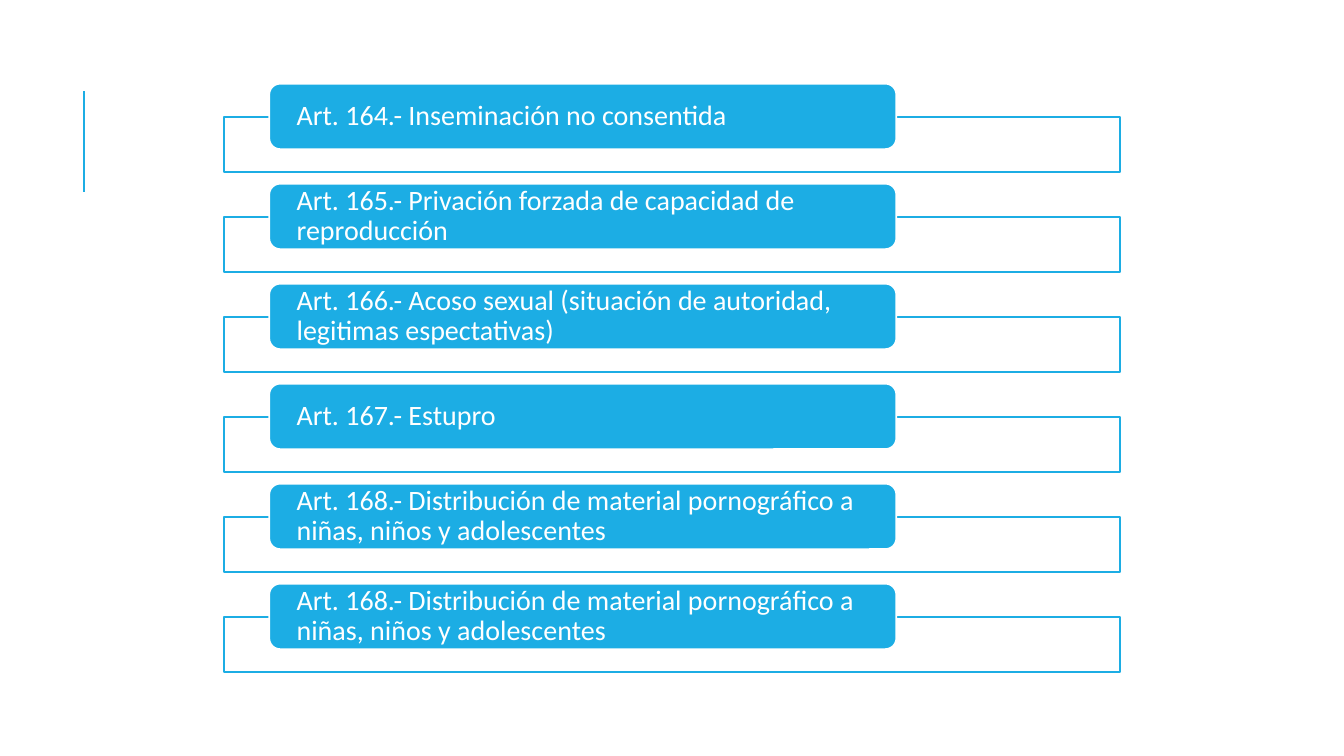
"""Build a slide listing articles 164 to 168 as labelled boxes."""
from dataclasses import dataclass

from lxml.etree import SubElement
from pptx import Presentation
from pptx.dml.color import RGBColor
from pptx.enum.shapes import MSO_CONNECTOR, MSO_SHAPE
from pptx.enum.text import MSO_ANCHOR, PP_ALIGN
from pptx.oxml.ns import qn
from pptx.shapes.autoshape import Shape
from pptx.slide import Slide
from pptx.util import Inches, Pt

COLORS = {"accent": "1CADE4", "white": "FFFFFF"}
FIRST_TOP, LAST_TOP = 0.83, 5.79
FRAME_DROP = 0.33


@dataclass(frozen=True)
class Article:
    number: int
    offence: str


ARTICLES = [
    Article(164, "Inseminación no consentida"),
    Article(165, "Privación forzada de capacidad de reproducción"),
    Article(166, "Acoso sexual (situación de autoridad, legitimas espectativas)"),
    Article(167, "Estupro"),
    Article(168, "Distribución de material pornográfico a niñas, niños y adolescentes"),
    Article(168, "Distribución de material pornográfico a niñas, niños y adolescentes"),
]


def color(name: str) -> RGBColor:
    return RGBColor.from_string(COLORS[name])


def add_box(slide: Slide, kind: MSO_SHAPE, left: float, top: float, width: float,
            height: float, fill: str, line: str) -> Shape:
    box = slide.shapes.add_shape(kind, Inches(left), Inches(top), Inches(width), Inches(height))
    box.shadow.inherit = False
    box.fill.solid()
    box.fill.fore_color.rgb = color(fill)
    box.line.color.rgb = color(line)
    box.line.width = Pt(1.25)
    return box


def add_article(slide: Slide, article: Article, top: float) -> None:
    frame = add_box(slide, MSO_SHAPE.RECTANGLE, 2.22, top + FRAME_DROP, 8.89, 0.55,
                    "white", "accent")
    frame_color = frame.fill._xPr.find(qn("a:solidFill"))[0]
    SubElement(frame_color, qn("a:alpha"), val="90000")

    label = add_box(slide, MSO_SHAPE.ROUNDED_RECTANGLE, 2.67, top, 6.22, 0.65,
                    "accent", "white")
    text = label.text_frame
    text.word_wrap = True
    text.vertical_anchor = MSO_ANCHOR.MIDDLE
    text.margin_left = text.margin_right = Inches(0.24)
    text.margin_top = text.margin_bottom = 0
    paragraph = text.paragraphs[0]
    paragraph.text = f"Art. {article.number}.- {article.offence}"
    paragraph.alignment = PP_ALIGN.LEFT
    paragraph.line_spacing = 0.9
    paragraph.font.name = "Calibri"
    paragraph.font.size = Pt(20)
    paragraph.font.color.rgb = color("white")


def add_side_rule(slide: Slide) -> None:
    rule = slide.shapes.add_connector(MSO_CONNECTOR.STRAIGHT, Inches(0.83), Inches(1.9),
                                      Inches(0.83), Inches(0.9))
    rule.line.color.rgb = color("accent")
    rule.line.width = Pt(1.5)
    SubElement(rule._element.spPr, qn("a:effectLst"))


def main() -> None:
    deck = Presentation()
    deck.slide_width, deck.slide_height = Inches(13.33), Inches(7.5)
    slide = deck.slides.add_slide(deck.slide_layouts[6])
    add_side_rule(slide)
    pitch = (LAST_TOP - FIRST_TOP) / (len(ARTICLES) - 1)
    for row, article in enumerate(ARTICLES):
        add_article(slide, article, FIRST_TOP + row * pitch)
    deck.save("out.pptx")


if __name__ == "__main__":
    main()
